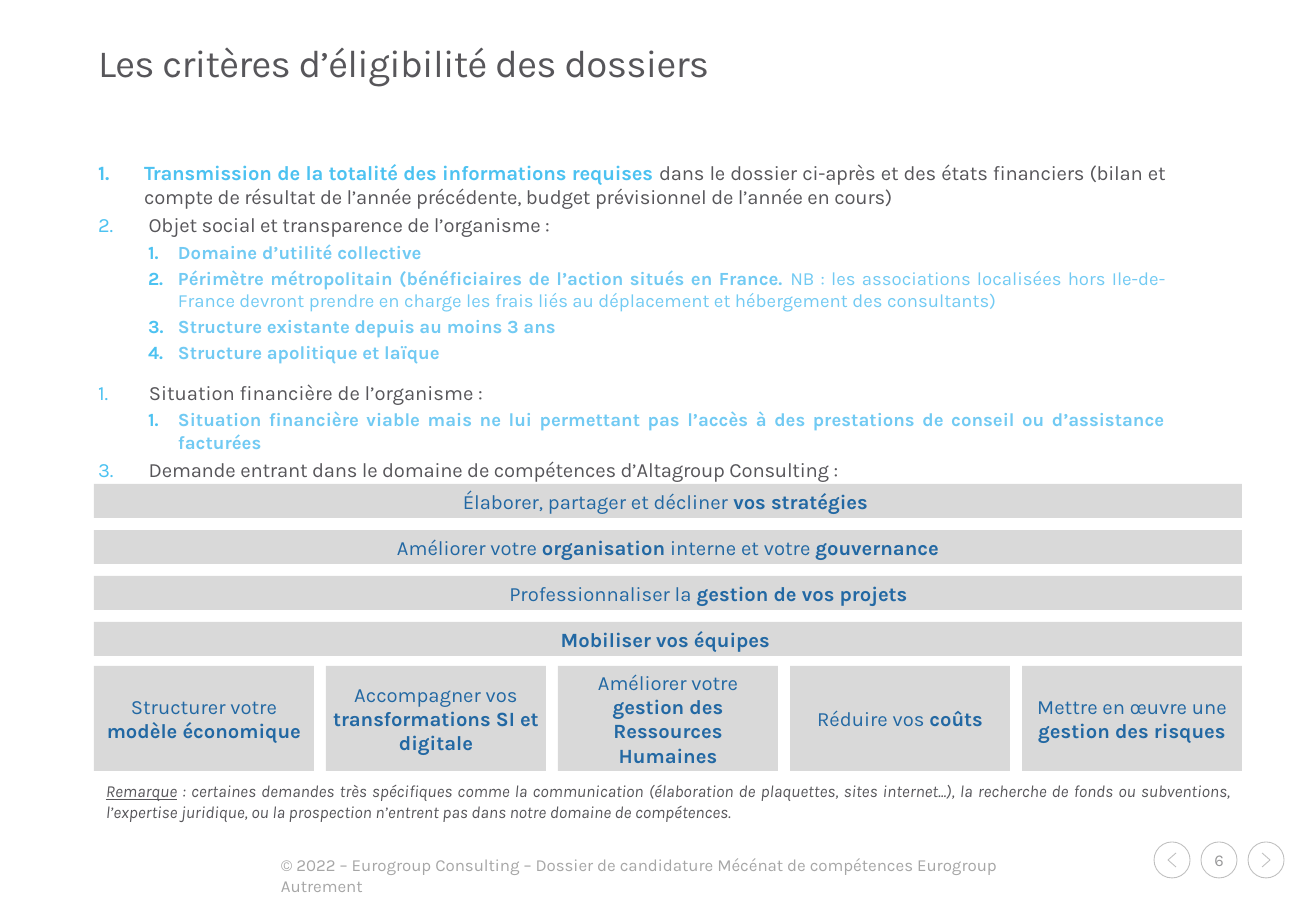
"""Build the slide on the eligibility criteria for application files."""
from lxml.etree import SubElement
from pptx import Presentation
from pptx.dml.color import RGBColor
from pptx.enum.shapes import MSO_SHAPE as Shape
from pptx.enum.text import MSO_ANCHOR as Anchor, MSO_AUTO_SIZE as AutoSize, PP_ALIGN as Align
from pptx.oxml.ns import qn
from pptx.util import Emu, Pt

PX = 914400 / 121.5
GREY = RGBColor(0x57, 0x56, 0x5A)
FOOTER_GREY = RGBColor(0xA6, 0xA6, 0xA6)
NUMBER_GREY = RGBColor(0x9A, 0x9A, 0x9B)
OUTLINE_GREY = RGBColor(0xBF, 0xBF, 0xBF)
PANEL_GREY = RGBColor(0xD9, 0xD9, 0xD9)
CYAN = RGBColor(0x4C, 0xC2, 0xF1)
LIGHT_CYAN = RGBColor(0x71, 0xCA, 0xF3)
BLUE = RGBColor(0x22, 0x68, 0xA3)


def px(*lengths):
    """Turn pixel lengths into EMU."""
    return [Emu(round(length * PX)) for length in lengths]


def write(paragraph, text, size=12, color=GREY, bold=False, italic=False, underline=False, spacing=0):
    """Add one formatted run to a paragraph."""
    run = paragraph.add_run()
    run.text = text
    font = run.font
    font.name, font.size, font.color.rgb = "Karla", Pt(size), color
    font.bold, font.italic, font.underline = bold, italic, underline
    if spacing:
        run._r.get_or_add_rPr().set("spc", str(spacing))


prs = Presentation()
prs.slide_width, prs.slide_height = px(1316, 911)
slide = prs.slides.add_slide(prs.slide_layouts[5])
shapes = slide.shapes

title = shapes.title
title.left, title.top, title.width, title.height = px(98, 43, 1119, 45)
heading = title.text_frame
heading.margin_left = heading.margin_right = heading.margin_top = heading.margin_bottom = 0
heading.auto_size = AutoSize.NONE
heading.vertical_anchor = Anchor.MIDDLE
heading.paragraphs[0].alignment = Align.LEFT
heading.paragraphs[0].line_spacing = 0.86
write(heading.paragraphs[0], "Les critères d’éligibilité des dossiers", size=22.8, spacing=-40)

main = dict(size=12, color=GREY)
tight = dict(main, spacing=-10)
sub = dict(size=11, color=LIGHT_CYAN)
strong = dict(sub, bold=True)
CRITERIA = [
    (0, [("Transmission de la totalité des informations requises ", dict(tight, color=CYAN, bold=True)),
         ("dans le dossier ci-après et des états financiers (bilan et compte de résultat de l’année "
          "précédente, budget prévisionnel de l’année en cours)", tight)]),
    (0, [(" Objet social et transparence de l’organisme : ", tight)]),
    (2, [("Domaine d’utilité collective", strong)]),
    (2, [("Périmètre métropolitain (bénéficiaires de l’action situés en France. ", strong),
         ("NB : les associations localisées hors Ile-de-France devront prendre en charge les frais "
          "liés au déplacement et hébergement des consultants)", sub)]),
    (2, [("Structure existante depuis au moins 3 ans", strong)]),
    (2, [("Structure apolitique et laïque", strong)]),
    (1, [(" Situation financière de l’organisme : ", main)]),
    (2, [("Situation financière viable mais ne lui permettant pas l’accès à des prestations de conseil "
          "ou d’assistance facturées ", strong)]),
    (0, [(" Demande entrant dans le domaine de compétences d’Altagroup Consulting : ", tight)]),
]
SPACE_BEFORE = {0: 2.4, 1: 10, 2: 2.2}
INDENTS = {0: (46, -46), 1: (46, -46), 2: (80, -30)}

criteria = shapes.add_textbox(*px(98, 160, 1068, 322)).text_frame
criteria.word_wrap = True
criteria.margin_left = criteria.margin_right = criteria.margin_top = criteria.margin_bottom = 0
for index, (level, runs) in enumerate(CRITERIA):
    criterion = criteria.add_paragraph() if index else criteria.paragraphs[0]
    criterion.level = level
    criterion.alignment = Align.JUSTIFY
    criterion.space_before = Pt(SPACE_BEFORE[level] if index else 0)
    properties = criterion._p.get_or_add_pPr()
    margin, indent = px(*INDENTS[level])
    properties.set("marL", str(margin))
    properties.set("indent", str(indent))
    bullet_color = SubElement(properties, qn("a:buClr"))
    SubElement(bullet_color, qn("a:srgbClr"), val=str(CYAN))
    SubElement(properties, qn("a:buAutoNum"), type="arabicPeriod")
    for text, style in runs:
        write(criterion, text, **style)

BARS = [
    (0, ["Élaborer, partager et décliner ", "vos stratégies "]),
    (0, ["Améliorer votre ", "organisation", " interne et votre ", "gouvernance"]),
    (81, ["Professionnaliser la ", "gestion de vos projets"]),
    (0, ["", "Mobiliser vos équipes "]),
]
BOXES = [
    ["Structurer votre ", "modèle économique"],
    ["Accompagner vos ", "transformations SI et digitale"],
    ["Améliorer votre ", "gestion des Ressources Humaines"],
    ["Réduire vos ", "coûts"],
    ["Mettre en œuvre une ", "gestion des risques"],
]
panels = [((94, 484 + 46 * row, 1148, 34), indent, parts) for row, (indent, parts) in enumerate(BARS)]
panels += [((94 + 232 * column, 666, 220, 105), 0, parts) for column, parts in enumerate(BOXES)]
for place, indent, parts in panels:
    panel = shapes.add_shape(Shape.RECTANGLE, *px(*place))
    panel.shadow.inherit = False
    panel.fill.solid()
    panel.fill.fore_color.rgb = PANEL_GREY
    panel.line.fill.background()
    frame = panel.text_frame
    frame.word_wrap = True
    frame.vertical_anchor = Anchor.MIDDLE
    frame.margin_left = frame.margin_right = frame.margin_top = frame.margin_bottom = px(5)[0]
    skill = frame.paragraphs[0]
    skill.alignment = Align.CENTER
    if indent:
        skill._p.get_or_add_pPr().set("marL", str(px(indent)[0]))
    for position, part in enumerate(parts):
        if part:
            write(skill, part, color=BLUE, bold=position % 2 == 1)

remark = shapes.add_textbox(*px(94, 775, 1148, 58)).text_frame
remark.word_wrap = True
remark.paragraphs[0].alignment = Align.JUSTIFY
write(remark.paragraphs[0], "Remarque", size=10, italic=True, underline=True)
write(remark.paragraphs[0],
      " : certaines demandes très spécifiques comme la communication (élaboration de plaquettes, sites "
      "internet...), la recherche de fonds ou subventions, l’expertise juridique, ou la prospection "
      "n’entrent pas dans notre domaine de compétences.", size=10, italic=True)

footer = shapes.add_textbox(*px(269, 849, 786, 54)).text_frame
footer.word_wrap = True
write(footer.paragraphs[0],
      "© 2022 – Eurogroup Consulting – Dossier de candidature Mécénat de compétences Eurogroup Autrement",
      size=10, color=FOOTER_GREY)

for direction in (-1, 0, 1):
    center = 1219 + 47 * direction
    button = shapes.add_shape(Shape.OVAL, *px(center - 18, 842, 36, 36))
    marks = [button]
    if direction:
        tip, base = center + 4 * direction, center - 4 * direction
        chevron = shapes.build_freeform(base, 853, scale=PX)
        chevron.add_line_segments([(tip, 860), (base, 867)], close=False)
        marks.append(chevron.convert_to_shape())
    else:
        number = button.text_frame
        number.word_wrap = False
        number.vertical_anchor = Anchor.MIDDLE
        number.margin_left = number.margin_right = number.margin_top = number.margin_bottom = 0
        number.paragraphs[0].alignment = Align.CENTER
        write(number.paragraphs[0], "6", size=9.8, color=NUMBER_GREY)
    for mark in marks:
        mark.shadow.inherit = False
        mark.fill.background()
        mark.line.color.rgb = OUTLINE_GREY
        mark.line.width = Pt(0.5)

prs.save("out.pptx")
